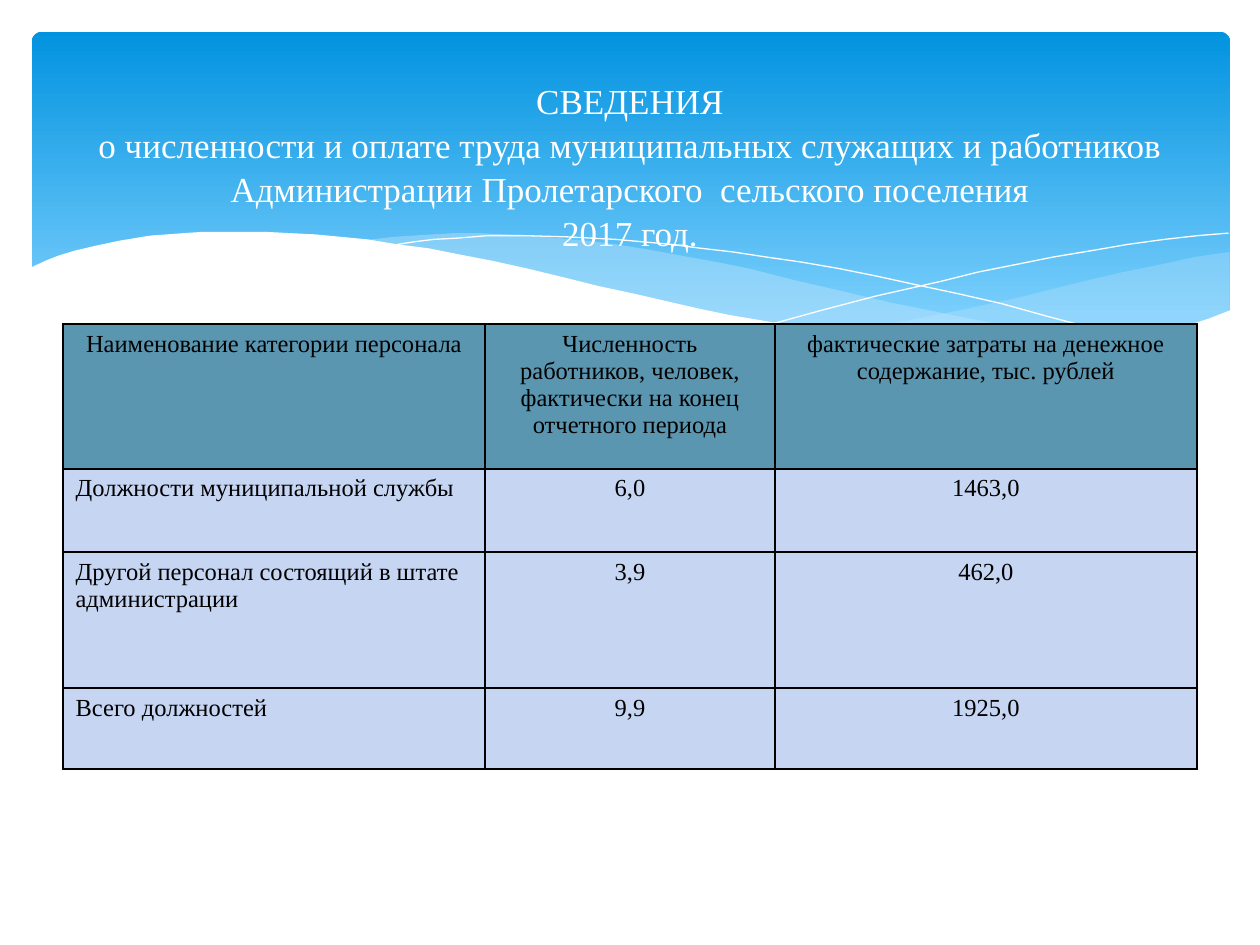
import pptx
import pptx.util
import pptx.dml.color
import pptx.enum.shapes
import pptx.enum.text
import pptx.oxml.ns
import lxml.etree

Cm = pptx.util.Cm
Pt = pptx.util.Pt
RGB = pptx.dml.color.RGBColor.from_string
qn = pptx.oxml.ns.qn
ALIGN = pptx.enum.text.PP_ALIGN

COLORS = {
    "sky_top": "0293E0",
    "sky_bottom": "83D3FE",
    "wave": "C6E7FC",
    "white": "FFFFFF",
    "black": "000000",
    "header": "5B96B1",
    "body": "C6D5F2",
}
FONT = "Times New Roman"
WAVE_UNIT = Cm(0.0254)  # wave points are in hundredths of an inch

presentation = pptx.Presentation()
presentation.slide_width = Cm(25.4)
presentation.slide_height = Cm(19.05)
slide = presentation.slides.add_slide(presentation.slide_layouts[6])


def style_paragraph(paragraph, size, color, alignment):
    paragraph.alignment = alignment
    paragraph.font.name = FONT
    paragraph.font.size = Pt(size)
    paragraph.font.color.rgb = RGB(COLORS[color])


# Blue gradient banner
banner = slide.shapes.add_shape(
    pptx.enum.shapes.MSO_SHAPE.ROUNDED_RECTANGLE, Cm(0.64), Cm(0.64), Cm(24.16), Cm(6.86))
banner.adjustments[0] = 0.03
banner.shadow.inherit = False
banner.line.fill.background()
banner.fill.gradient()
banner.fill.gradient_angle = 270
for stop, color, position in zip(
        banner.fill.gradient_stops, ("sky_top", "sky_bottom"), (0, 0.9)):
    stop.color.rgb = RGB(COLORS[color])
    stop.position = position

# Waves: fill colour, opacity in percent (None for an outline only), points
right_wave = [
    (975, 200), (948, 204), (921, 210), (891, 216), (861, 223), (805, 237), (753, 248),
    (706, 257), (661, 265), (691, 269), (719, 272), (745, 275), (769, 277), (803, 278),
    (835, 277), (863, 275), (889, 272), (913, 267), (935, 262), (949, 257), (963, 252),
    (976, 247), (976, 200)]
middle_wave = [
    (893, 273), (866, 269), (837, 265), (807, 260), (775, 254), (741, 247), (706, 240),
    (668, 231), (629, 222), (598, 214), (569, 208), (541, 203), (514, 198), (489, 194),
    (465, 191), (442, 189), (420, 187), (399, 186), (380, 185), (361, 185), (344, 186),
    (313, 188), (286, 191), (323, 196), (362, 203), (404, 211), (449, 222), (491, 232),
    (530, 240), (566, 248), (601, 255), (634, 261), (665, 266), (695, 270), (722, 274),
    (748, 276), (773, 277), (807, 278), (838, 278), (867, 276)]
falling_line = [
    (309, 195), (328, 192), (344, 190), (363, 189), (387, 187), (416, 187), (450, 188),
    (489, 190), (533, 194), (556, 197), (582, 200), (608, 204), (636, 208), (665, 213),
    (695, 219), (727, 226), (760, 233), (795, 241), (831, 251), (869, 261), (907, 272)]
rising_line = [
    (613, 257), (653, 246), (695, 235), (748, 223), (776, 216), (806, 210), (836, 204),
    (866, 199), (895, 194), (924, 190), (951, 187), (975, 185)]
white_wave = [
    (977, 246), (959, 253), (940, 259), (920, 265), (899, 269), (875, 273), (850, 275),
    (823, 277), (793, 276), (761, 275), (726, 272), (688, 268), (648, 262), (603, 254),
    (579, 250), (555, 245), (529, 239), (503, 233), (475, 227), (447, 220), (418, 213),
    (391, 207), (365, 202), (340, 197), (316, 194), (292, 190), (271, 188), (250, 186),
    (230, 185), (211, 184), (177, 184), (161, 184), (146, 185), (119, 187), (95, 191),
    (76, 195), (59, 199), (46, 203), (36, 207), (23, 213), (23, 329), (977, 329)]
waves = [
    ("wave", 29, right_wave),
    ("wave", 40, middle_wave),
    ("white", None, falling_line),
    ("white", None, rising_line),
    ("white", 100, white_wave),
]
for color, opacity, points in waves:
    builder = slide.shapes.build_freeform(*points[0], scale=WAVE_UNIT)
    builder.add_line_segments(points[1:], close=opacity is not None)
    shape = builder.convert_to_shape()
    shape.shadow.inherit = False
    if opacity is None:
        shape.fill.background()
        shape.line.color.rgb = RGB(COLORS[color])
        shape.line.width = Pt(0)
        continue
    shape.line.fill.background()
    shape.fill.solid()
    shape.fill.fore_color.rgb = RGB(COLORS[color])
    if opacity < 100:
        fill_color = shape.fill._xPr.find(qn("a:solidFill"))[0]
        lxml.etree.SubElement(fill_color, qn("a:alpha"), val=str(opacity * 1000))

# Title
title = slide.shapes.add_textbox(Cm(1.27), Cm(0.76), Cm(22.86), Cm(5.16))
title.text_frame.word_wrap = True
title.text_frame.vertical_anchor = pptx.enum.text.MSO_ANCHOR.MIDDLE
paragraph = title.text_frame.paragraphs[0]
paragraph.text = (
    "СВЕДЕНИЯ\n"
    "о численности и оплате труда муниципальных служащих и работников "
    "Администрации Пролетарского  сельского поселения\n"
    "2017 год.")
paragraph.line_spacing = 1.05
style_paragraph(paragraph, 20, "white", ALIGN.CENTER)

# Staff table
rows = [
    ("Наименование категории персонала",
     "Численность работников, человек,\nфактически на конец отчетного периода",
     "фактические затраты на денежное содержание, тыс. рублей"),
    ("Должности муниципальной службы", "6,0", "1463,0"),
    ("Другой персонал состоящий в штате администрации", "3,9", "462,0"),
    ("Всего должностей", "9,9", "1925,0"),
]
column_widths = (8.51, 5.84, 8.51)
row_heights = (2.92, 1.68, 2.74, 1.63)
table = slide.shapes.add_table(
    len(rows), len(column_widths), Cm(1.27), Cm(6.53),
    Cm(sum(column_widths)), Cm(sum(row_heights))).table
for column, width in zip(table.columns, column_widths):
    column.width = Cm(width)
for row, height in zip(table.rows, row_heights):
    row.height = Cm(height)

for row_index, texts in enumerate(rows):
    for column_index, text in enumerate(texts):
        cell = table.cell(row_index, column_index)
        cell.text = text
        is_label = row_index > 0 and column_index == 0
        for paragraph in cell.text_frame.paragraphs:
            style_paragraph(paragraph, 14, "black", ALIGN.LEFT if is_label else ALIGN.CENTER)
            paragraph.font.bold = False
        # Borders come before the fill in the cell properties
        properties = cell._tc.get_or_add_tcPr()
        for side in ("lnL", "lnR", "lnT", "lnB"):
            border = lxml.etree.SubElement(properties, qn(f"a:{side}"), w=str(Pt(1)))
            border_fill = lxml.etree.SubElement(border, qn("a:solidFill"))
            lxml.etree.SubElement(border_fill, qn("a:srgbClr"), val=COLORS["black"])
        cell.fill.solid()
        cell.fill.fore_color.rgb = RGB(COLORS["body" if row_index else "header"])

presentation.save("out.pptx")
